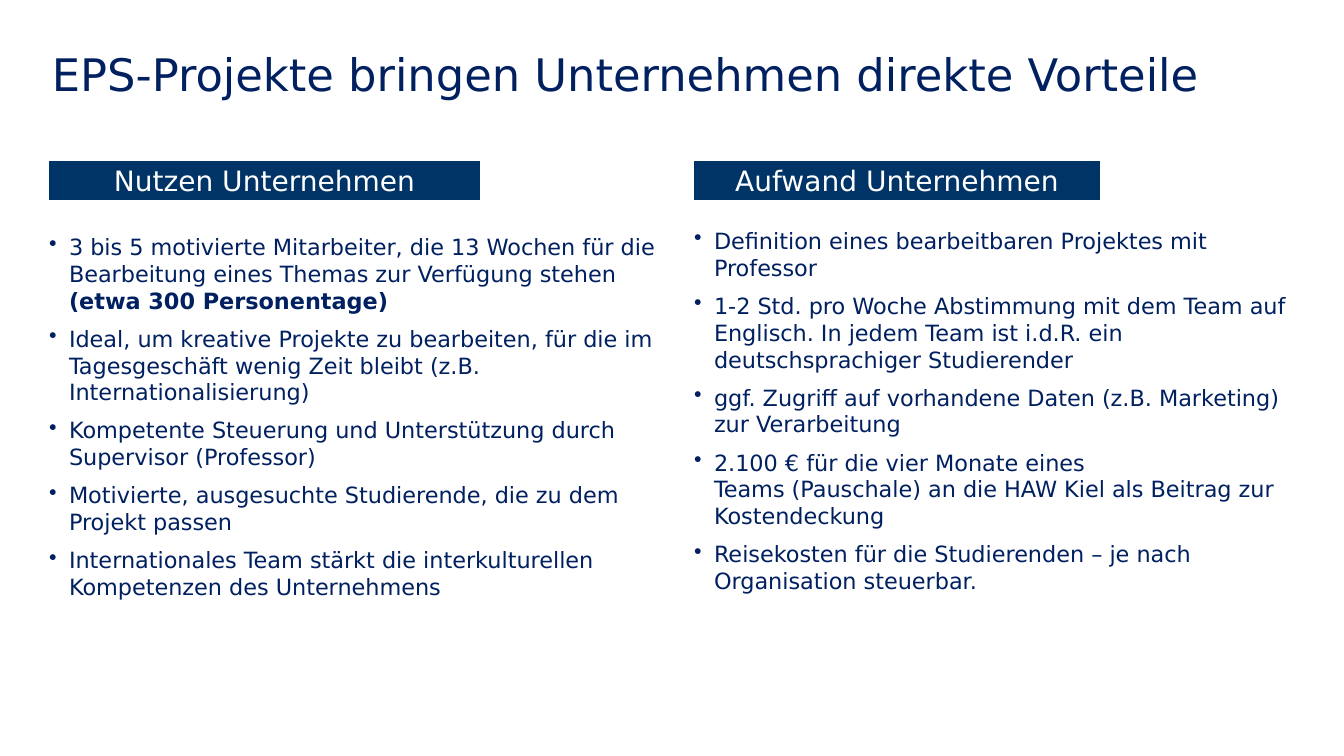
from dataclasses import dataclass

import pptx
import pptx.dml.color
import pptx.enum.shapes
import pptx.enum.text
import pptx.oxml
import pptx.oxml.ns
import pptx.util

EMU_PER_PX = 914400 / 100.8


@dataclass(frozen=True)
class Theme:
    font: str = "DejaVu Sans"
    text: str = "002060"
    banner: str = "003366"
    banner_text: str = "FFFFFF"
    title_size: int = 32
    banner_size: int = 20
    body_size: int = 16
    body_gap: int = 8


THEME = Theme()

BENEFITS = [
    ("3 bis 5 motivierte Mitarbeiter, die 13 Wochen für die Bearbeitung "
     "eines Themas zur Verfügung stehen\n", "(etwa 300 Personentage)"),
    ("Ideal, um kreative Projekte zu bearbeiten, für die im Tagesgeschäft "
     "wenig Zeit bleibt (z.B. Internationalisierung)", ""),
    ("Kompetente Steuerung und Unterstützung durch Supervisor (Professor)", ""),
    ("Motivierte, ausgesuchte Studierende, die zu dem\nProjekt passen", ""),
    ("Internationales Team stärkt die interkulturellen Kompetenzen "
     "des Unternehmens", ""),
]
EFFORTS = [
    ("Definition eines bearbeitbaren Projektes mit Professor", ""),
    ("1-2 Std. pro Woche Abstimmung mit dem Team auf Englisch. "
     "In jedem Team ist i.d.R. ein deutschsprachiger Studierender", ""),
    ("ggf. Zugriff auf vorhandene Daten (z.B. Marketing) zur Verarbeitung", ""),
    ("2.100 € für die vier Monate eines\nTeams (Pauschale) an die HAW Kiel "
     "als Beitrag zur Kostendeckung", ""),
    ("Reisekosten für die Studierenden – je nach Organisation steuerbar.", ""),
]


def px(length):
    return pptx.util.Emu(round(length * EMU_PER_PX))


def color(value):
    return pptx.dml.color.RGBColor.from_string(value)


def style(para, size, value):
    para.font.name = THEME.font
    para.font.size = pptx.util.Pt(size)
    para.font.color.rgb = color(value)


def clear_margins(frame):
    frame.margin_left = frame.margin_right = 0
    frame.margin_top = frame.margin_bottom = 0


def add_text_frame(page, left, top, width, height):
    box = page.shapes.add_textbox(px(left), px(top), px(width), px(height))
    frame = box.text_frame
    frame.word_wrap = True
    clear_margins(frame)
    return frame


def add_bullet(para):
    properties = para._p.get_or_add_pPr()
    properties.set("marL", str(px(20)))
    properties.set("indent", str(-px(20)))
    bullet = pptx.oxml.parse_xml(
        f'<a:buChar {pptx.oxml.ns.nsdecls("a")} char="•"/>')
    properties.append(bullet)


def add_title(page, left, top, width, height, text):
    para = add_text_frame(page, left, top, width, height).paragraphs[0]
    para.text = text
    para.line_spacing = 0.9
    style(para, THEME.title_size, THEME.text)


def add_banner(page, left, top, width, height, text):
    banner = page.shapes.add_shape(
        pptx.enum.shapes.MSO_SHAPE.RECTANGLE,
        px(left), px(top), px(width), px(height))
    banner.shadow.inherit = False
    banner.fill.solid()
    banner.fill.fore_color.rgb = color(THEME.banner)
    banner.line.fill.background()
    frame = banner.text_frame
    frame.word_wrap = False
    frame.vertical_anchor = pptx.enum.text.MSO_ANCHOR.MIDDLE
    clear_margins(frame)
    para = frame.paragraphs[0]
    para.text = text
    para.alignment = pptx.enum.text.PP_ALIGN.CENTER
    style(para, THEME.banner_size, THEME.banner_text)


def add_bullet_list(page, left, top, width, height, items):
    """Each item is a plain text and an optional bold ending."""
    frame = add_text_frame(page, left, top, width, height)
    for index, (text, bold_ending) in enumerate(items):
        para = frame.add_paragraph() if index else frame.paragraphs[0]
        para.text = text
        if bold_ending:
            span = para.add_run()
            span.text = bold_ending
            span.font.bold = True
        if index:
            para.space_before = pptx.util.Pt(THEME.body_gap)
        add_bullet(para)
        style(para, THEME.body_size, THEME.text)


def add_column(page, left, top, width, height, heading, banner_width,
               list_offset, items):
    add_banner(page, left, top, banner_width, 39, heading)
    add_bullet_list(page, left, top + list_offset, width,
                    height - list_offset, items)


def main():
    deck = pptx.Presentation()
    deck.slide_width, deck.slide_height = px(1344), px(756)
    page = deck.slides.add_slide(deck.slide_layouts[6])
    add_title(page, 52, 53, 1243, 122,
              "EPS-Projekte bringen Unternehmen direkte Vorteile")
    add_column(page, 49, 161, 653, 478, "Nutzen Unternehmen", 431, 72, BENEFITS)
    add_column(page, 694, 161, 612, 502, "Aufwand Unternehmen", 406, 66, EFFORTS)
    deck.save("out.pptx")


if __name__ == "__main__":
    main()
